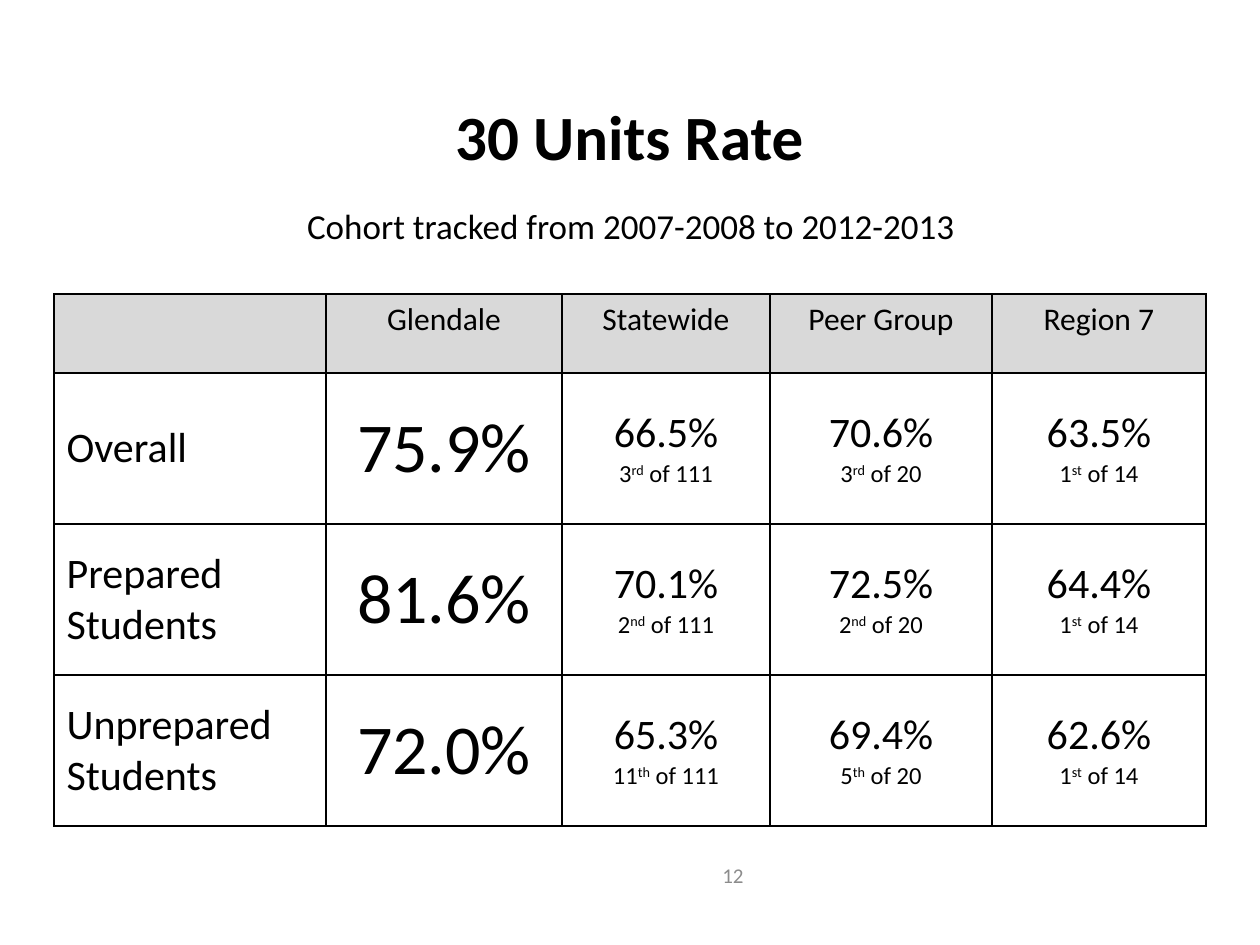
from lxml import etree
from pptx import Presentation
from pptx import util as u
from pptx.dml.color import RGBColor
from pptx.enum import text
from pptx.oxml import ns

BLACK = RGBColor(0x00, 0x00, 0x00)
GRAY = RGBColor(0x8C, 0x8C, 0x8C)
HEADER_FILL = RGBColor(0xD9, 0xD9, 0xD9)
FONT = "Calibri"
PX_PER_INCH = 126

CENTER = text.PP_ALIGN.CENTER
LEFT = text.PP_ALIGN.LEFT
RIGHT = text.PP_ALIGN.RIGHT
TOP = text.MSO_ANCHOR.TOP
MIDDLE = text.MSO_ANCHOR.MIDDLE

COLUMN_WIDTHS = [272, 236, 208, 222, 214]
ROW_HEIGHTS = [79, 151, 151, 151]
HEADINGS = ["", "Glendale", "Statewide", "Peer Group", "Region 7"]
# Group label, own rate, then (rate, rank, ordinal suffix, group size)
RATES = [
    (["Overall"], "75.9%",
     [("66.5%", "3", "rd", 111), ("70.6%", "3", "rd", 20), ("63.5%", "1", "st", 14)]),
    (["Prepared", "Students"], "81.6%",
     [("70.1%", "2", "nd", 111), ("72.5%", "2", "nd", 20), ("64.4%", "1", "st", 14)]),
    (["Unprepared", "Students"], "72.0%",
     [("65.3%", "11", "th", 111), ("69.4%", "5", "th", 20), ("62.6%", "1", "st", 14)]),
]


def px(length):
    return u.Emu(round(length * u.Inches(1) / PX_PER_INCH))


def write(paragraph, words, size=18, color=BLACK, bold=False, align=CENTER, raised=False):
    """Append one formatted run to a paragraph."""
    paragraph.alignment = align
    run = paragraph.add_run()
    run.text = words
    run.font.name = FONT
    run.font.size = u.Pt(size)
    run.font.bold = bold
    run.font.color.rgb = color
    if raised:
        run.font._element.set("baseline", "30000")


class SlideBuilder:
    def __init__(self, slide, border=BLACK, border_width=1):
        self.slide = slide
        self.border = border
        self.border_width = border_width

    def label(self, words, left, top, width, height, wrap=True, grow=False,
              anchor=TOP, space_after=0, **style):
        box = self.slide.shapes.add_textbox(px(left), px(top), px(width), px(height))
        frame = box.text_frame
        frame.word_wrap = wrap
        frame.vertical_anchor = anchor
        if grow:
            frame.auto_size = text.MSO_AUTO_SIZE.SHAPE_TO_FIT_TEXT
        paragraph = frame.paragraphs[0]
        paragraph.space_after = u.Pt(space_after)
        write(paragraph, words, **style)

    def table(self, left, top, widths, heights):
        grid = self.slide.shapes.add_table(
            len(heights), len(widths), px(left), px(top),
            px(sum(widths)), px(sum(heights))).table
        grid.first_row = grid.horz_banding = False
        for column, width in zip(grid.columns, widths):
            column.width = px(width)
        for row, height in zip(grid.rows, heights):
            row.height = px(height)
        return grid

    def cell(self, cell, lines, align=CENTER, anchor=MIDDLE, fill=None):
        """Fill a cell; each line is a list of (words, format) runs."""
        self.outline(cell)
        if fill is None:
            cell.fill.background()
        else:
            cell.fill.solid()
            cell.fill.fore_color.rgb = fill
        cell.vertical_anchor = anchor
        frame = cell.text_frame
        for index, runs in enumerate(lines):
            paragraph = frame.add_paragraph() if index else frame.paragraphs[0]
            for words, style in runs:
                write(paragraph, words, align=align, **style)

    def outline(self, cell):
        properties = cell._tc.get_or_add_tcPr()
        for side in ("a:lnL", "a:lnR", "a:lnT", "a:lnB"):
            line = etree.SubElement(properties, ns.qn(side), w=str(u.Pt(self.border_width)))
            fill = etree.SubElement(line, ns.qn("a:solidFill"))
            etree.SubElement(fill, ns.qn("a:srgbClr"), val=str(self.border))


def main():
    deck = Presentation()
    deck.slide_width, deck.slide_height = px(1260), px(945)
    builder = SlideBuilder(deck.slides.add_slide(deck.slide_layouts[6]))

    # Title, subtitle and page number
    builder.label("30 Units Rate", 417, 91, 425, 89, wrap=False, grow=True,
                  size=36, bold=True)
    builder.label("Cohort tracked from 2007-2008 to 2012-2013", 130, 198, 1002, 55,
                  grow=True, space_after=24, size=20)
    builder.label("12", 504, 850, 252, 50, anchor=MIDDLE,
                  size=12, color=GRAY, align=RIGHT)

    # Table heading
    rates = builder.table(54, 294, COLUMN_WIDTHS, ROW_HEIGHTS)
    for column, heading in enumerate(HEADINGS):
        lines = [[(heading, {})]] if heading else []
        builder.cell(rates.cell(0, column), lines, anchor=TOP, fill=HEADER_FILL)

    # One row per student group
    medium, large, small = {"size": 24}, {"size": 40}, {"size": 14}
    for row, (group, own_rate, comparisons) in enumerate(RATES, start=1):
        builder.cell(rates.cell(row, 0), [[(line, medium)] for line in group], align=LEFT)
        builder.cell(rates.cell(row, 1), [[(own_rate, large)]])
        for column, (rate, rank, suffix, total) in enumerate(comparisons, start=2):
            ranking = [(rank, small), (suffix, {**small, "raised": True}),
                       (f" of {total}", small)]
            builder.cell(rates.cell(row, column), [[(rate, medium)], ranking])

    deck.save("out.pptx")


if __name__ == "__main__":
    main()
